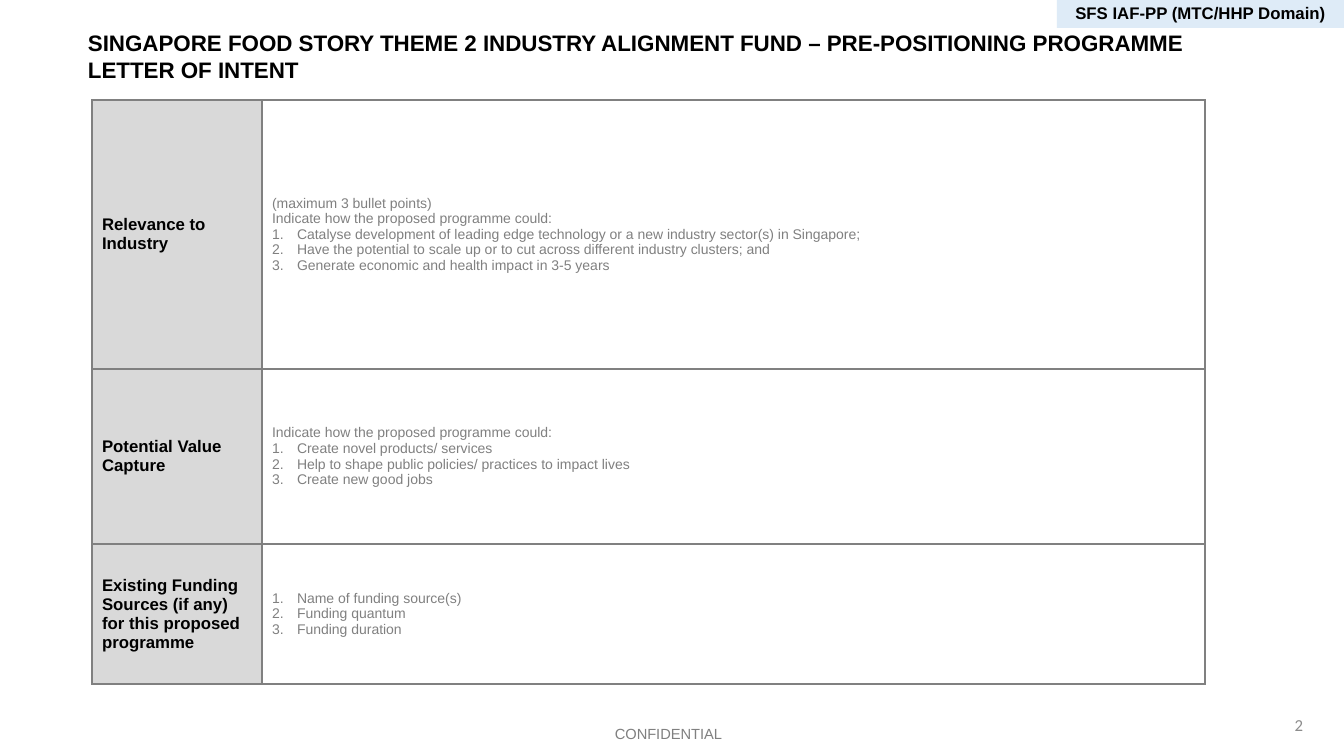
from dataclasses import dataclass

from lxml import etree
from pptx import Presentation
from pptx import util as u
from pptx.dml.color import RGBColor
from pptx.enum import shapes, text
from pptx.oxml import parse_xml
from pptx.oxml.ns import nsdecls, qn

PX = 914400 / 100.8


@dataclass(frozen=True)
class Theme:
    ink: str = "000000"
    muted: str = "808080"
    number: str = "8C8C8C"
    label_fill: str = "D9D9D9"
    tag_fill: str = "DEEBF7"
    sans: str = "Arial"
    number_font: str = "Calibri"
    title: float = 16
    label: float = 12
    footer: float = 10.5
    body: float = 10


theme = Theme()


def px(length):
    return u.Emu(round(length * PX))


def style(paragraph, size, color, bold=False, face=theme.sans):
    font = paragraph.font
    font.size, font.bold, font.name = u.Pt(size), bold, face
    font.color.rgb = RGBColor.from_string(color)


prs = Presentation()
prs.slide_width, prs.slide_height = px(1344), px(756)
slide = prs.slides.add_slide(prs.slide_layouts[6])

# Each section: row height, label, introductory lines, numbered points
sections = [
    (269, "Relevance to Industry",
     ["(maximum 3 bullet points)", "Indicate how the proposed programme could:"],
     ["Catalyse development of leading edge technology or a new industry sector(s) in Singapore;",
      "Have the potential to scale up or to cut across different industry clusters; and",
      "Generate economic and health impact in 3-5 years"]),
    (175, "Potential Value Capture",
     ["Indicate how the proposed programme could:"],
     ["Create novel products/ services",
      "Help to shape public policies/ practices to impact lives",
      "Create new good jobs"]),
    (140, "Existing Funding Sources (if any) for this proposed programme",
     [],
     ["Name of funding source(s)", "Funding quantum", "Funding duration"]),
]
column_widths = [170, 943]
letter = slide.shapes.add_table(
    len(sections), 2, px(92), px(100),
    px(sum(column_widths)), px(sum(section[0] for section in sections))).table
letter.first_row = letter.horz_banding = False
for column, width in zip(letter.columns, column_widths):
    column.width = px(width)

for row, (height, label, intro, points) in enumerate(sections):
    letter.rows[row].height = px(height)
    label_cell, guidance_cell = letter.cell(row, 0), letter.cell(row, 1)
    for cell in (label_cell, guidance_cell):
        cell.vertical_anchor = text.MSO_ANCHOR.MIDDLE
        for side in ("lnL", "lnR", "lnT", "lnB"):
            cell._tc.get_or_add_tcPr().append(parse_xml(
                f'<a:{side} {nsdecls("a")} w="{u.Pt(1)}"><a:solidFill>'
                f'<a:srgbClr val="{theme.muted}"/></a:solidFill></a:{side}>'))
    label_cell.fill.solid()
    label_cell.fill.fore_color.rgb = RGBColor.from_string(theme.label_fill)
    guidance_cell.fill.background()

    label_cell.text = label
    style(label_cell.text_frame.paragraphs[0], theme.label, theme.ink, bold=True)
    guidance_cell.text = "\n".join(intro + points)
    for index, paragraph in enumerate(guidance_cell.text_frame.paragraphs):
        style(paragraph, theme.body, theme.muted)
        if index >= len(intro):
            props = paragraph._p.get_or_add_pPr()
            props.set("marL", str(px(25)))
            props.set("indent", str(-px(25)))
            numbering = etree.Element(qn("a:buAutoNum"), type="arabicPeriod")
            props.insert(0, numbering)

align, anchor = text.PP_ALIGN, text.MSO_ANCHOR
captions = [
    ((78, 24, 1174, 60),
     "SINGAPORE FOOD STORY THEME 2 INDUSTRY ALIGNMENT FUND – PRE-POSITIONING PROGRAMME\vLETTER OF INTENT",
     align.LEFT, anchor.TOP, (theme.title, theme.ink, True)),
    ((593, 720, 151, 29), "CONFIDENTIAL",
     align.CENTER, anchor.TOP, (theme.footer, theme.muted)),
    ((1011, 705, 302, 40), "2",
     align.RIGHT, anchor.MIDDLE, (theme.label, theme.number, False, theme.number_font)),
    ((1057, -2, 287, 30), "SFS IAF-PP (MTC/HHP Domain)",
     align.CENTER, anchor.TOP, (theme.label, theme.ink, True)),
]
for box, wording, alignment, vertical, look in captions:
    bounds = [px(length) for length in box]
    if wording.startswith("SFS"):
        caption = slide.shapes.add_shape(shapes.MSO_SHAPE.RECTANGLE, *bounds)
        caption.shadow.inherit = False
        caption.fill.solid()
        caption.fill.fore_color.rgb = RGBColor.from_string(theme.tag_fill)
        caption.line.fill.background()
    else:
        caption = slide.shapes.add_textbox(*bounds)
    frame = caption.text_frame
    frame.word_wrap = True
    frame.vertical_anchor = vertical
    paragraph = frame.paragraphs[0]
    paragraph.text = wording
    paragraph.alignment = alignment
    style(paragraph, *look)

prs.save("out.pptx")
